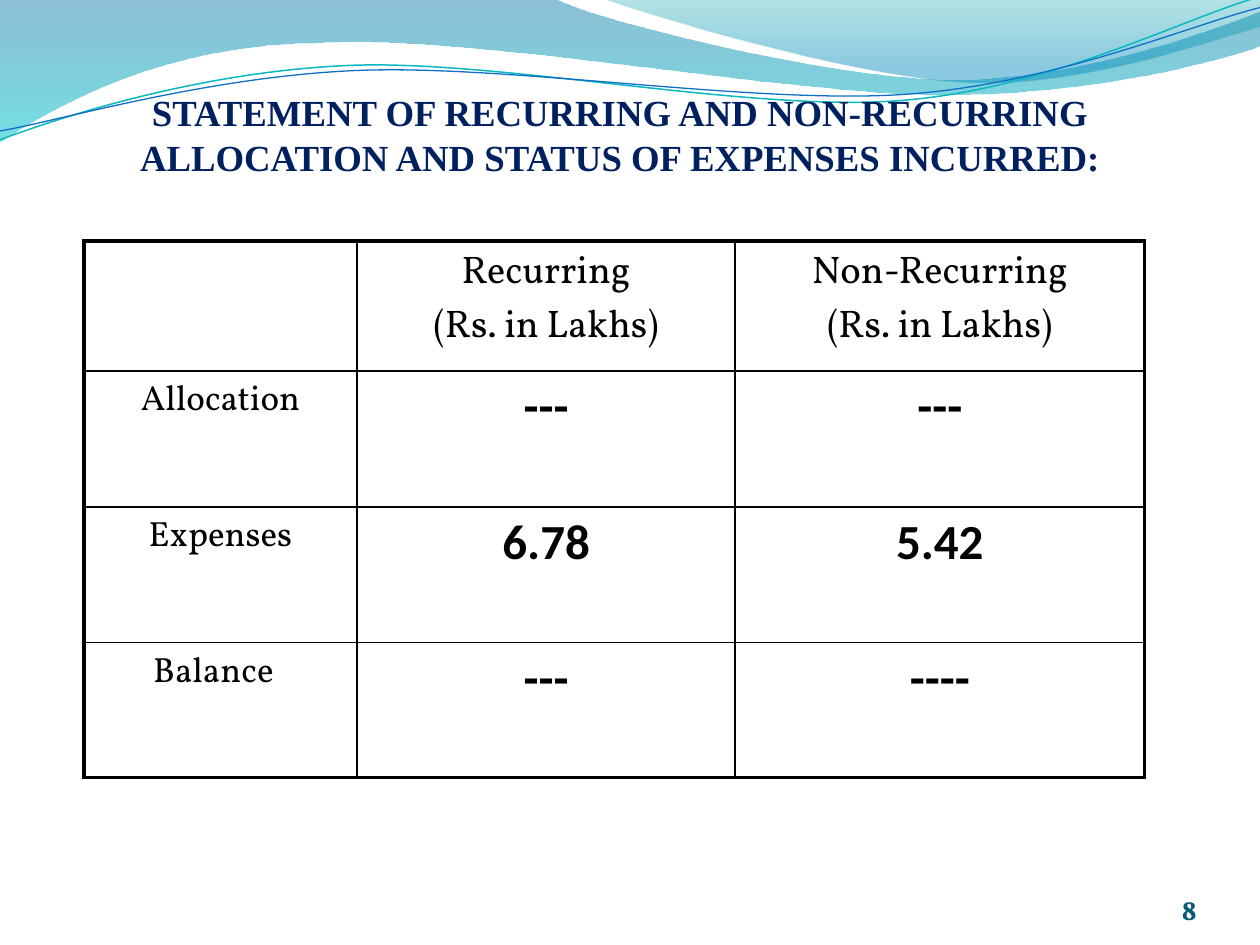
from dataclasses import dataclass

from pptx import Presentation
from pptx.dml.color import RGBColor
from pptx.enum.text import MSO_ANCHOR, MSO_AUTO_SIZE, PP_ALIGN
from pptx.oxml import parse_xml
from pptx.oxml.ns import nsdecls, qn
from pptx.util import Cm, Pt


@dataclass(frozen=True)
class Theme:
    title_font: str = "Times New Roman"
    text_font: str = "Vollkorn"
    value_font: str = "Calibri"
    title_color: str = "002060"
    text_color: str = "000000"
    number_color: str = "045D75"
    title_size: float = 21
    header_size: float = 22
    label_size: float = 20
    value_size: float = 28
    number_size: float = 16
    outer_border: float = 2.25
    inner_border: float = 1


# Waves: points in hundredths of an inch. A pair is a straight step,
# six numbers are a cubic curve (two control points and the end).
WAVE_UNIT = Cm(0.0254)
LEFT_WAVE = [(0, -1), (440, -1), (476, 17, 664, 63, 758, 63),
             (853, 63, 958, 26, 1000, 9), (1001, 36),
             (983, 44, 870, 76, 746, 75), (622, 75, 382, 28, 257, 34),
             (129, 35, 46, 83, -1, 113)]
RIGHT_WAVE = [(479, -1), (509, 11, 682, 62, 769, 65),
              (856, 69, 961, 32, 1000, 21), (1000, 0)]
TEAL_LINE = [(0, 111), (48, 93, 158, 57, 277, 52),
             (395, 47, 593, 89, 713, 80), (833, 71, 938, 15, 998, -2)]
BLUE_LINE = [(0, 104), (47, 96, 164, 61, 283, 56),
             (403, 51, 597, 83, 717, 75), (836, 67, 941, 21, 1000, 6)]

COLUMN_WIDTHS = [5.51, 7.62, 8.25]
ROW_HEIGHTS = [2.62, 2.74, 2.73, 2.72]
EXPENSE_ROWS = [
    ["", "Recurring\n(Rs. in Lakhs)", "Non-Recurring\n(Rs. in Lakhs)"],
    ["Allocation", "---", "---"],
    ["Expenses", "6.78", "5.42"],
    ["Balance", "---", "----"],
]


class SlideBuilder:
    def __init__(self, page, theme):
        self.page = page
        self.theme = theme

    def style(self, para, font, size, color, bold=False, align=PP_ALIGN.CENTER):
        para.alignment = align
        para.font.name = font
        para.font.size = Pt(size)
        para.font.bold = bold
        para.font.color.rgb = RGBColor.from_string(color)

    def frame(self, box):
        frame = box.text_frame
        frame.word_wrap = True
        frame.auto_size = MSO_AUTO_SIZE.NONE
        frame.vertical_anchor = MSO_ANCHOR.BOTTOM
        frame.margin_left = frame.margin_right = 0
        frame.margin_top = frame.margin_bottom = 0
        return frame

    def outline(self, steps, closed):
        """Build a freeform on the step ends, then bend its curved steps."""
        ends = [step[-2:] for step in steps]
        builder = self.page.shapes.build_freeform(*ends[0], scale=WAVE_UNIT)
        builder.add_line_segments(ends[1:], close=closed)
        shape = builder.convert_to_shape()
        shape.shadow.inherit = False
        left = min(x for x, _ in ends)
        top = min(y for _, y in ends)
        lines = list(shape.element.iter(qn("a:lnTo")))
        for line, step in zip(lines, steps[1:]):
            if len(step) == 6:
                points = "".join(f'<a:pt x="{x - left}" y="{y - top}"/>'
                                 for x, y in zip(step[::2], step[1::2]))
                line.getparent().replace(line, parse_xml(
                    f'<a:cubicBezTo {nsdecls("a")}>{points}</a:cubicBezTo>'))
        return shape

    def wave(self, steps, stops):
        """Draw a see-through wave; stops are (position, colour, opacity %)."""
        shape = self.outline(steps, closed=True)
        shape.line.fill.background()
        shape.fill.gradient()
        shape.fill.gradient_angle = 270
        for stop, (position, color, _) in zip(shape.fill.gradient_stops, stops):
            stop.position = position
            stop.color.rgb = RGBColor.from_string(color)
        colors = shape.element.spPr.iter(qn("a:srgbClr"))
        for color, (_, _, opacity) in zip(list(colors), stops):
            color.append(parse_xml(
                f'<a:alpha {nsdecls("a")} val="{opacity * 1000}"/>'))

    def curve(self, steps, color, width):
        shape = self.outline(steps, closed=False)
        shape.fill.background()
        shape.line.color.rgb = RGBColor.from_string(color)
        shape.line.width = Pt(width)

    def title(self, text, left, top, width, height):
        box = self.page.shapes.title
        self.page.shapes.element.append(box.element)  # in front of the waves
        box.left, box.top = Cm(left), Cm(top)
        box.width, box.height = Cm(width), Cm(height)
        para = self.frame(box).paragraphs[0]
        para.text = text
        para.line_spacing = 1.02
        self.style(para, self.theme.title_font, self.theme.title_size,
                   self.theme.title_color, bold=True)

    def page_number(self, text, left, top, width, height):
        box = self.page.shapes.add_textbox(
            Cm(left), Cm(top), Cm(width), Cm(height))
        para = self.frame(box).paragraphs[0]
        para.text = text
        self.style(para, self.theme.text_font, self.theme.number_size,
                   self.theme.number_color, bold=True, align=PP_ALIGN.RIGHT)

    def borders(self, cell, outer_sides):
        """Rule all four sides, heavier where the table ends."""
        for side in "LRTB":
            points = (self.theme.outer_border if side in outer_sides
                      else self.theme.inner_border)
            cell._tc.get_or_add_tcPr().append(parse_xml(
                f'<a:ln{side} {nsdecls("a")} w="{Pt(points)}"><a:solidFill>'
                f'<a:srgbClr val="{self.theme.text_color}"/></a:solidFill>'
                f'</a:ln{side}>'))

    def table(self, rows, left, top, widths, heights):
        table = self.page.shapes.add_table(
            len(rows), len(widths), Cm(left), Cm(top),
            Cm(sum(widths)), Cm(sum(heights))).table
        table.first_row = table.horz_banding = False
        for column, width in zip(table.columns, widths):
            column.width = Cm(width)
        for row, height in zip(table.rows, heights):
            row.height = Cm(height)
        for i, texts in enumerate(rows):
            for j, text in enumerate(texts):
                cell = table.cell(i, j)
                sides = (("L" if j == 0 else "")
                         + ("R" if j == len(widths) - 1 else "")
                         + ("T" if i == 0 else "")
                         + ("B" if i == len(rows) - 1 else ""))
                self.borders(cell, sides)
                cell.fill.background()
                para = cell.text_frame.paragraphs[0]
                para.text = text
                is_value = i > 0 and j > 0
                font = self.theme.value_font if is_value else self.theme.text_font
                size = (self.theme.header_size if i == 0
                        else self.theme.value_size if is_value
                        else self.theme.label_size)
                self.style(para, font, size, self.theme.text_color, bold=is_value)
        return table


def main():
    deck = Presentation()
    deck.slide_width, deck.slide_height = Cm(25.4), Cm(19.05)
    page = deck.slides.add_slide(deck.slide_layouts[5])
    builder = SlideBuilder(page, Theme())

    builder.wave(LEFT_WAVE, [(0, "0074A1", 45), (1, "00C6CF", 55)])
    builder.wave(RIGHT_WAVE, [(0, "00A1A9", 30), (0.8, "008BBF", 45)])
    builder.curve(TEAL_LINE, "0AB8BF", 0.85)
    builder.curve(BLUE_LINE, "0F6FC6", 0.75)
    builder.title("STATEMENT OF RECURRING AND NON-RECURRING ALLOCATION "
                  "AND STATUS OF EXPENSES INCURRED:", 1.7, 1.7, 21.59, 1.9)
    table = builder.table(EXPENSE_ROWS, 1.69, 4.86, COLUMN_WIDTHS, ROW_HEIGHTS)
    balance = table.cell(3, 0)
    balance.margin_left = Cm(1.4)
    balance.text_frame.paragraphs[0].alignment = PP_ALIGN.LEFT
    builder.page_number("8", 22.02, 17.65, 2.11, 1.02)

    deck.save("out.pptx")


if __name__ == "__main__":
    main()
